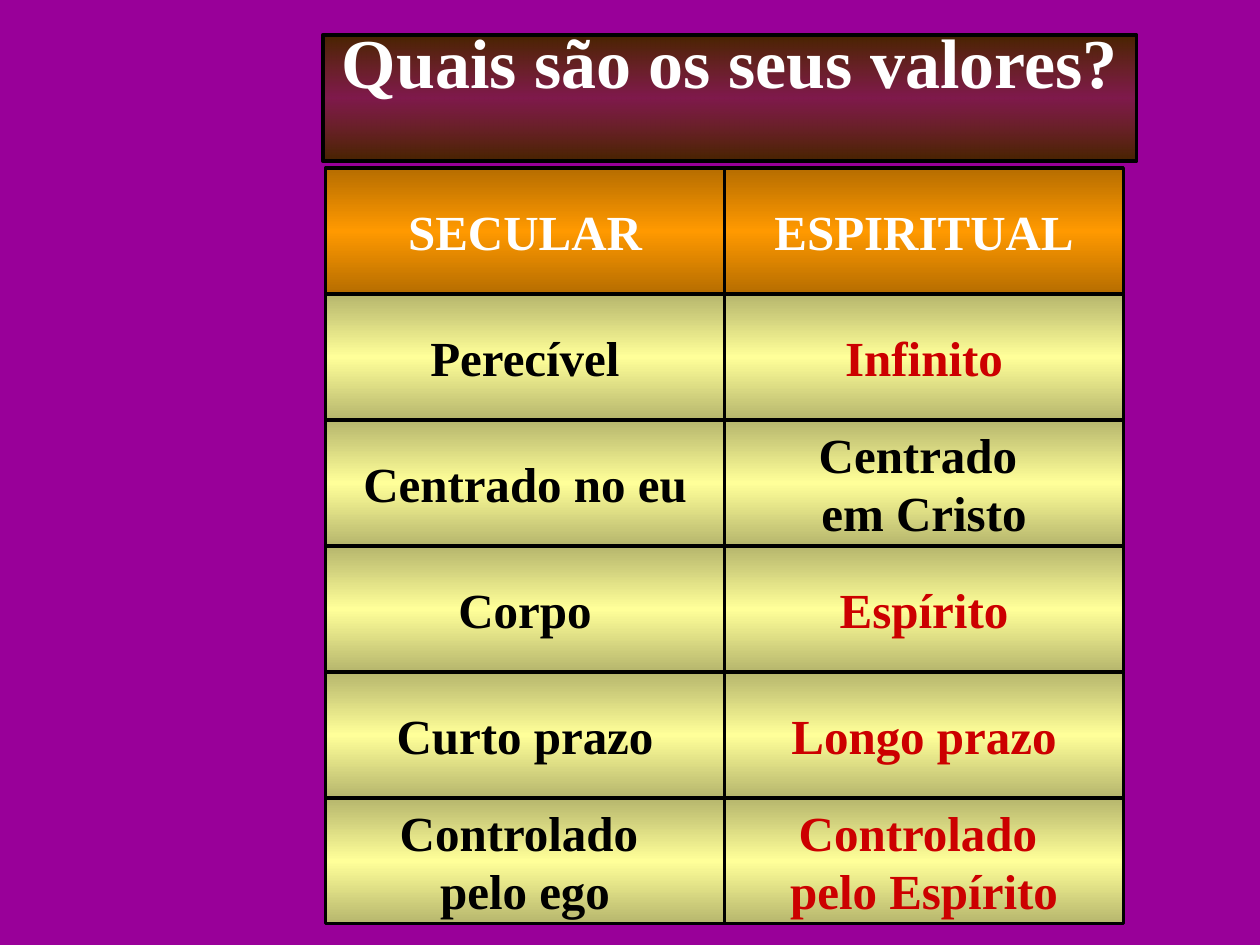
from lxml import etree
from pptx import Presentation
from pptx.dml.color import RGBColor
from pptx.enum import shapes, text
from pptx.oxml import ns
from pptx.util import Pt

PURPLE = RGBColor(0x99, 0x00, 0x99)
BROWN = RGBColor(0x66, 0x33, 0x00)
ORANGE = RGBColor(0xFF, 0x99, 0x00)
YELLOW = RGBColor(0xFF, 0xFF, 0x99)
WHITE = RGBColor(0xFF, 0xFF, 0xFF)
BLACK = RGBColor(0x00, 0x00, 0x00)
RED = RGBColor(0xCC, 0x00, 0x00)

FONT = "Times New Roman"
LEFT, TOP, WIDTH, HEIGHT = 186, 96, 228, 72
SHADE = 46275

ROWS = [
    (["Perecível"], ["Infinito"], RED),
    (["Centrado no eu"], ["Centrado ", "em Cristo"], BLACK),
    (["Corpo"], ["Espírito"], RED),
    (["Curto prazo"], ["Longo prazo"], RED),
    (["Controlado ", "pelo ego"], ["Controlado ", "pelo Espírito"], RED),
]


def add_stop(stops, place, color, effect=None, value=None):
    stop = etree.SubElement(stops, ns.qn("a:gs"), pos=str(place * 1000))
    tint = etree.SubElement(stop, ns.qn("a:srgbClr"), val=str(color))
    if effect:
        etree.SubElement(tint, ns.qn(effect), val=str(value))


def blend(shape, color, alpha=None):
    shape.fill.gradient()
    shape.fill.gradient_angle = 270
    stops = shape._element.spPr.find(ns.qn("a:gradFill")).find(ns.qn("a:gsLst"))
    for stop in list(stops):
        stops.remove(stop)
    add_stop(stops, 0, color, "a:shade", SHADE)
    add_stop(stops, 50, color, "a:alpha" if alpha else None, alpha)
    add_stop(stops, 100, color, "a:shade", SHADE)


def add_box(slide, area, color, line, alpha=None):
    box = slide.shapes.add_shape(
        shapes.MSO_SHAPE.RECTANGLE, *[Pt(size) for size in area])
    box.shadow.inherit = False
    blend(box, color, alpha)
    box.line.color.rgb = BLACK
    box.line.width = Pt(line)
    return box


def write(box, lines, size, color, wrap=False):
    frame = box.text_frame
    frame.word_wrap = wrap
    frame.vertical_anchor = text.MSO_ANCHOR.MIDDLE
    for index, line in enumerate(lines):
        para = frame.add_paragraph() if index else frame.paragraphs[0]
        para.alignment = text.PP_ALIGN.CENTER
        run = para.add_run()
        run.text = line
        run.font.name = FONT
        run.font.size = Pt(size)
        run.font.bold = True
        run.font.color.rgb = color


def add_title(slide):
    box = add_box(slide, (184.5, 20, 465, 72), BROWN, 2.25, 50000)
    write(box, ["Quais são os seus valores?"], 40, WHITE, True)
    box.text_frame.margin_top = Pt(0)
    box.text_frame.margin_bottom = Pt(43)


def add_cell(slide, row, col, lines, fill, color):
    area = (LEFT + col * WIDTH, TOP + row * HEIGHT, WIDTH, HEIGHT)
    write(add_box(slide, area, fill, 1.75), lines, 28, color)


def main():
    deck = Presentation()
    deck.slide_width, deck.slide_height = Pt(720), Pt(540)
    slide = deck.slides.add_slide(deck.slide_layouts[6])
    slide.background.fill.solid()
    slide.background.fill.fore_color.rgb = PURPLE
    add_title(slide)
    for col, head in enumerate(["SECULAR", "ESPIRITUAL"]):
        add_cell(slide, 0, col, [head], ORANGE, WHITE)
    for row, (world, soul, color) in enumerate(ROWS, 1):
        add_cell(slide, row, 0, world, YELLOW, BLACK)
        add_cell(slide, row, 1, soul, YELLOW, color)
    deck.save("out.pptx")


if __name__ == "__main__":
    main()
